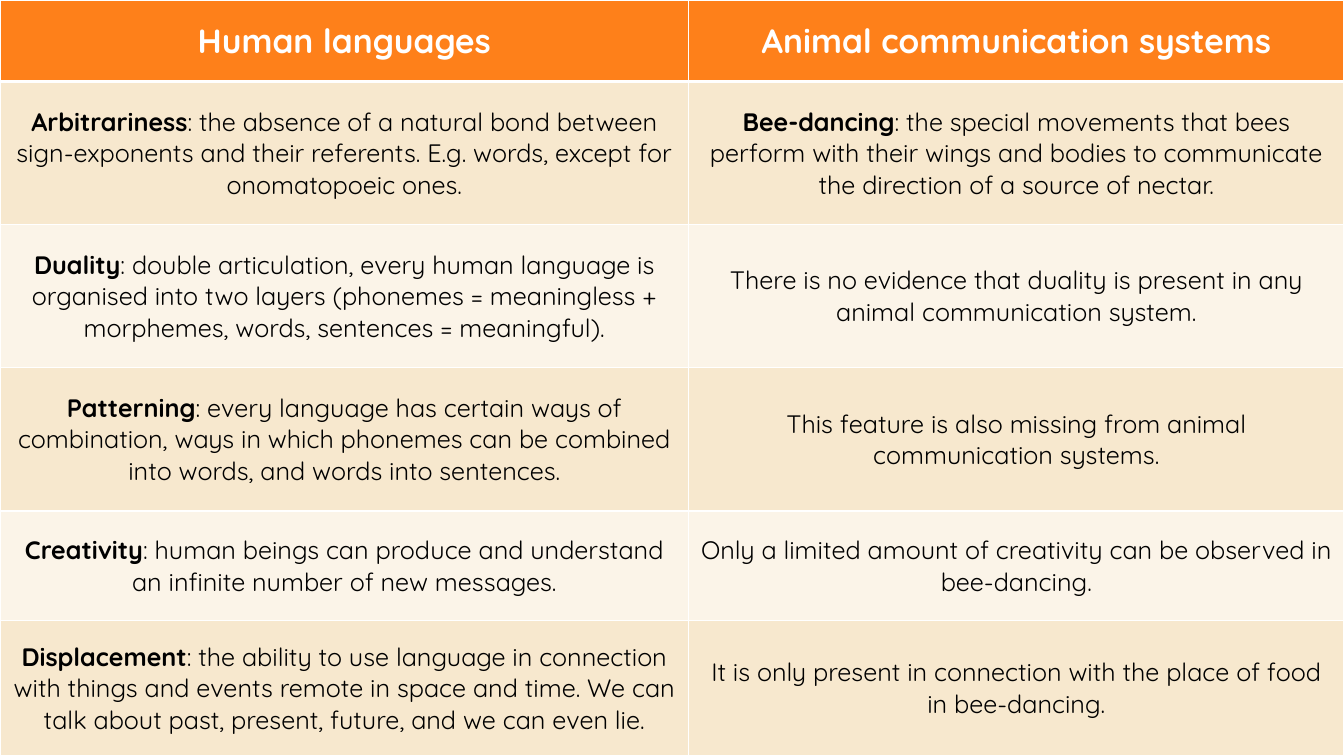
from typing import NamedTuple

from lxml.etree import SubElement
from pptx import Presentation
from pptx.dml.color import RGBColor
from pptx.enum.text import MSO_ANCHOR, PP_ALIGN
from pptx.oxml.ns import qn
from pptx.table import _Cell as Cell
from pptx.util import Inches, Pt

BLACK = RGBColor(0x00, 0x00, 0x00)
WHITE = RGBColor(0xFF, 0xFF, 0xFF)
ORANGE = RGBColor(0xFE, 0x80, 0x1A)
SAND = RGBColor(0xF7, 0xE8, 0xCE)
CREAM = RGBColor(0xFB, 0xF4, 0xE8)

COL_WIDTHS = (6.83, 6.5)
ROW_HEIGHTS = (0.81, 1.42, 1.42, 1.42, 1.09, 1.34)
HEADER_FONT = {"name": "Quicksand", "size": Pt(24), "bold": True}
BODY_FONT = {"name": "Quicksand", "size": Pt(18), "bold": False}


class Entry(NamedTuple):
    text: str
    term: str = ""


HEADERS = (Entry("", "Human languages"), Entry("", "Animal communication systems"))
FEATURES = (
    (Entry(": the absence of a natural bond between sign-exponents and their referents. "
           "E.g. words, except for onomatopoeic ones.", "Arbitrariness"),
     Entry(": the special movements that bees perform with their wings and bodies "
           "to communicate the direction of a source of nectar.", "Bee-dancing")),
    (Entry(": double articulation, every human language is organised into two layers "
           "(phonemes = meaningless + morphemes, words, sentences = meaningful).", "Duality"),
     Entry("There is no evidence that duality is present in any animal communication system.")),
    (Entry(": every language has certain ways of combination, ways in which phonemes "
           "can be combined into words, and words into sentences.", "Patterning"),
     Entry("This feature is also missing from animal communication systems.")),
    (Entry(": human beings can produce and understand an infinite number of new messages.",
           "Creativity"),
     Entry("Only a limited amount of creativity can be observed in bee-dancing.")),
    (Entry(": the ability to use language in connection with things and events remote in "
           "space and time. We can talk about past, present, future, and we can even lie.",
           "Displacement"),
     Entry("It is only present in connection with the place of food in bee-dancing.")),
)


def set_borders(cell: Cell, top: float, bottom: float) -> None:
    """Draw white borders, 1 pt at the sides; call before setting the fill."""
    tc_pr = cell._tc.get_or_add_tcPr()
    for side, width in {"L": 1, "R": 1, "T": top, "B": bottom}.items():
        ln = SubElement(tc_pr, qn(f"a:ln{side}"), w=str(Pt(width)))
        SubElement(SubElement(ln, qn("a:solidFill")), qn("a:srgbClr"), val=str(WHITE))


def write_entry(cell: Cell, entry: Entry, font: dict, color: RGBColor) -> None:
    cell.vertical_anchor = MSO_ANCHOR.MIDDLE
    p = cell.text_frame.paragraphs[0]
    p.alignment = PP_ALIGN.CENTER
    for text, bold in ((entry.term, True), (entry.text, False)):
        if not text:
            continue
        r = p.add_run()
        r.text = text
        for name, value in {**font, "bold": bold}.items():
            setattr(r.font, name, value)
        r.font.color.rgb = color


def main() -> None:
    prs = Presentation()
    prs.slide_width, prs.slide_height = Inches(13.33), Inches(7.5)
    slide = prs.slides.add_slide(prs.slide_layouts[6])
    slide.background.fill.solid()
    slide.background.fill.fore_color.rgb = BLACK

    table = slide.shapes.add_table(len(ROW_HEIGHTS), len(COL_WIDTHS), 0, 0,
                                   prs.slide_width, prs.slide_height).table
    for column, width in zip(table.columns, COL_WIDTHS):
        column.width = Inches(width)
    for row, height in zip(table.rows, ROW_HEIGHTS):
        row.height = Inches(height)

    for i, entries in enumerate((HEADERS, *FEATURES)):
        is_header = i == 0
        fill = ORANGE if is_header else SAND if i % 2 else CREAM
        for j, entry in enumerate(entries):
            cell = table.cell(i, j)
            set_borders(cell, top=3 if i == 1 else 1, bottom=3 if is_header else 1)
            cell.fill.solid()
            cell.fill.fore_color.rgb = fill
            write_entry(cell, entry, HEADER_FONT if is_header else BODY_FONT,
                        WHITE if is_header else BLACK)
    prs.save("out.pptx")


if __name__ == "__main__":
    main()
